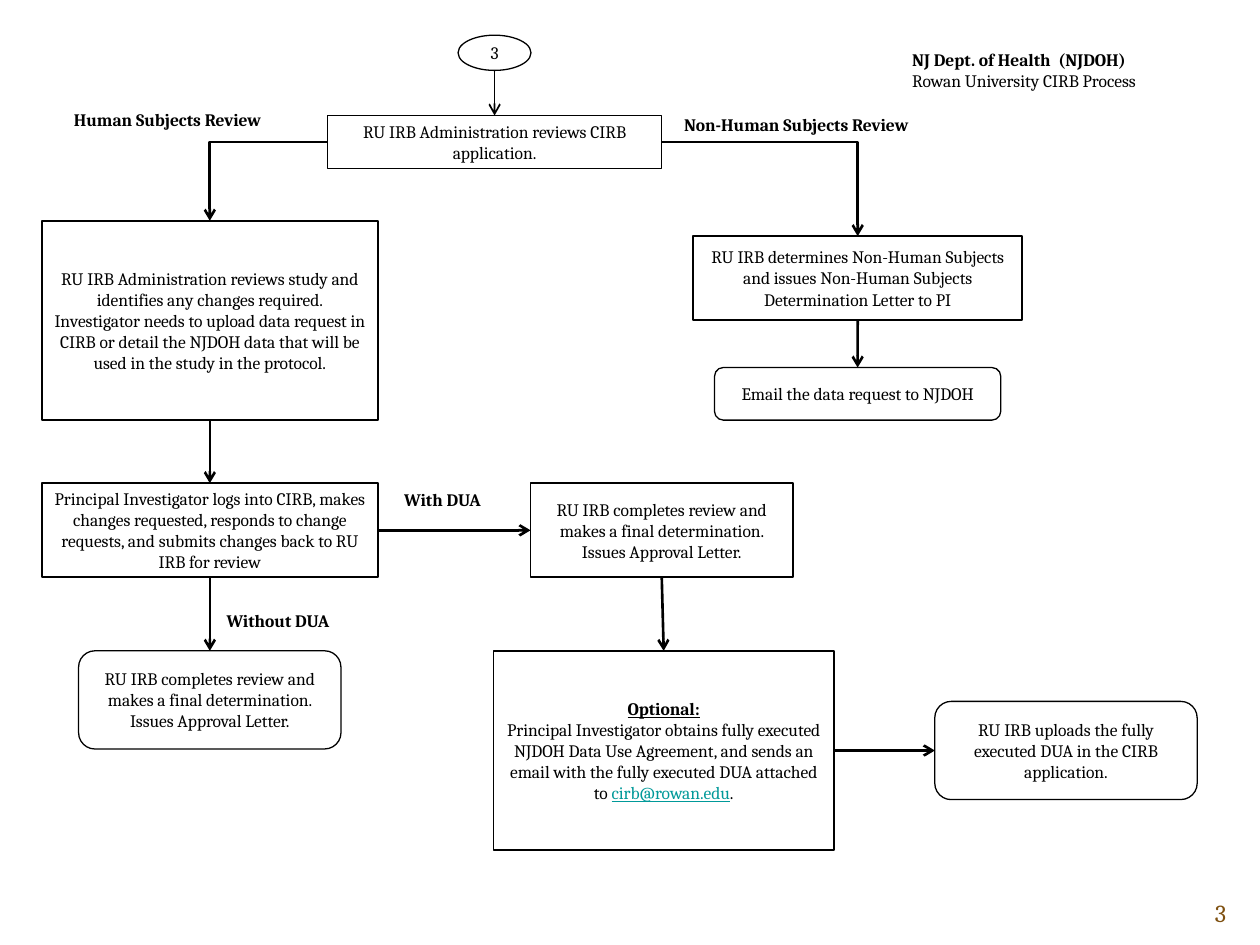
from lxml.etree import SubElement
from pptx import Presentation
from pptx.dml.color import RGBColor
from pptx.enum.shapes import MSO_CONNECTOR as LINK, MSO_SHAPE as SHAPE
from pptx.enum.text import MSO_ANCHOR as ANCHOR, PP_ALIGN as ALIGN
from pptx.oxml.ns import qn
from pptx.util import Cm, Pt

FONT = "Cambria"
BLACK, TEAL, BROWN = "000000", "009999", "7F5111"
TOP, LEFT, BOTTOM, RIGHT = range(4)

# Centres of the flowchart columns and tops of its shared rows, in cm
HUMAN_X, START_X, DUA_X, NON_HUMAN_X, UPLOAD_X = 4.23, 9.97, 13.34, 17.29, 21.49
CHANGES_Y, OUTCOME_Y = 9.74, 13.12
APPROVAL = "RU IRB completes review and makes a final determination. Issues Approval Letter."


def rgb(value):
    return RGBColor.from_string(value)


def add_run(p, text, size=10, color=BLACK, bold=False, underline=False):
    r = p.add_run()
    r.text = text
    font = r.font
    font.name, font.size, font.bold, font.underline = FONT, Pt(size), bold, underline
    font.color.rgb = rgb(color)


def write(tf, paragraphs, align=ALIGN.LEFT, **fmt):
    """Fill a frame; each paragraph is a string or a list of (text, format) runs."""
    tf.word_wrap = True
    for i, content in enumerate(paragraphs):
        p = tf.paragraphs[0] if i == 0 else tf.add_paragraph()
        p.alignment = align
        runs = [(content, {})] if isinstance(content, str) else content
        for text, own in runs:
            add_run(p, text, **{**fmt, **own})


def add_label(slide, x, y, w, h, *paragraphs, **fmt):
    box = slide.shapes.add_textbox(Cm(x), Cm(y), Cm(w), Cm(h))
    write(box.text_frame, paragraphs, **fmt)


def add_node(slide, kind, center, y, w, h, *paragraphs):
    sp = slide.shapes.add_shape(kind, Cm(center - w / 2), Cm(y), Cm(w), Cm(h))
    sp.shadow.inherit = False
    sp.fill.background()
    sp.line.color.rgb = rgb(BLACK)
    sp.line.width = Pt(1 if kind == SHAPE.FLOWCHART_PROCESS else 0.75)
    sp.text_frame.vertical_anchor = ANCHOR.MIDDLE
    write(sp.text_frame, paragraphs, align=ALIGN.CENTER)
    return sp


def add_arrow(slide, kind=LINK.STRAIGHT, width=1.5):
    cxn = slide.shapes.add_connector(kind, 0, 0, 0, 0)
    cxn.line.color.rgb = rgb(BLACK)
    cxn.line.width = Pt(width)
    SubElement(cxn.line._get_or_add_ln(), qn("a:tailEnd"), type="arrow")
    SubElement(cxn._element.spPr, qn("a:effectLst"))
    return cxn


def join(slide, start, start_side, end, end_side, kind=LINK.STRAIGHT):
    cxn = add_arrow(slide, kind)
    cxn.begin_connect(start, start_side)
    cxn.end_connect(end, end_side)
    if kind == LINK.ELBOW:  # a single corner
        cxn._element.spPr.find(qn("a:prstGeom")).set("prst", "bentConnector2")


def main():
    prs = Presentation()
    prs.slide_width, prs.slide_height = Cm(25.4), Cm(19.05)
    slide = prs.slides.add_slide(prs.slide_layouts[6])
    process, rounded = SHAPE.FLOWCHART_PROCESS, SHAPE.ROUNDED_RECTANGLE

    # Heading and page number
    add_label(slide, 18.14, 0.86, 6, 1.12,
              [("NJ Dept. of Health  (NJDOH)", {"bold": True})],
              "Rowan University CIRB Process")
    add_label(slide, 23.7, 17.98, 1.27, 0.84, "3",
              align=ALIGN.RIGHT, size=14, color=BROWN)

    # Start of the process
    start = add_node(slide, SHAPE.FLOWCHART_CONNECTOR, START_X, 0.71, 1.47, 0.71, "3")
    review = add_node(slide, process, START_X, 2.33, 6.73, 1.07,
                      "RU IRB Administration reviews CIRB application.")

    # Non-human subjects branch
    letter = add_node(slide, process, NON_HUMAN_X, 4.76, 6.64, 1.69,
                      "RU IRB determines Non-Human Subjects and issues "
                      "Non-Human Subjects Determination Letter to PI")
    email = add_node(slide, rounded, NON_HUMAN_X, 7.41, 5.77, 1.06,
                     "Email the data request to NJDOH")

    # Human subjects branch
    study = add_node(slide, process, HUMAN_X, 4.45, 6.77, 4.02,
                     "RU IRB Administration reviews study and identifies any changes required.",
                     "Investigator needs to upload data request in CIRB or detail the "
                     "NJDOH data that will be used in the study in the protocol.")
    changes = add_node(slide, process, HUMAN_X, CHANGES_Y, 6.77, 1.9,
                       "Principal Investigator logs into CIRB, makes changes requested, "
                       "responds to change requests, and submits changes back to RU IRB "
                       "for review")
    approval = add_node(slide, rounded, HUMAN_X, OUTCOME_Y, 5.29, 1.98, APPROVAL)

    # Data use agreement path
    dua_approval = add_node(slide, process, DUA_X, CHANGES_Y, 5.29, 1.9, APPROVAL)
    optional = add_node(slide, process, DUA_X + 0.04, OUTCOME_Y, 6.86, 4.02,
                        [("Optional:", {"bold": True, "underline": True})],
                        [("Principal Investigator obtains fully executed NJDOH Data Use "
                          "Agreement, and sends an email with the fully executed DUA "
                          "attached to ", {}),
                         ("cirb@rowan.edu", {"color": TEAL, "underline": True}),
                         (".", {})])
    upload = add_node(slide, rounded, UPLOAD_X, OUTCOME_Y + 1.02, 5.29, 1.98,
                      "RU IRB uploads the fully executed DUA in the CIRB application.")

    # Arrows; the oval's bottom is not site 2, so that end stays free
    first = add_arrow(slide, width=1)
    first.begin_x, first.begin_y = Cm(START_X), start.top + start.height
    first.end_connect(review, TOP)
    join(slide, review, LEFT, study, TOP, LINK.ELBOW)
    join(slide, review, RIGHT, letter, TOP, LINK.ELBOW)
    for upper, lower in ((letter, email), (study, changes), (changes, approval),
                         (dua_approval, optional)):
        join(slide, upper, BOTTOM, lower, TOP)
    for before, after in ((changes, dua_approval), (optional, upload)):
        join(slide, before, RIGHT, after, LEFT)

    # Branch labels
    for x, y, w, text in ((1.24, 2.08, 5.31, "Human Subjects Review"),
                          (13.54, 2.18, 5.92, "Non-Human Subjects Review"),
                          (4.32, 12.17, 3.28, "Without DUA"),
                          (7.9, 9.73, 3.28, "With DUA")):
        add_label(slide, x, y, w, 0.69, text, bold=True)

    prs.save("out.pptx")


if __name__ == "__main__":
    main()
